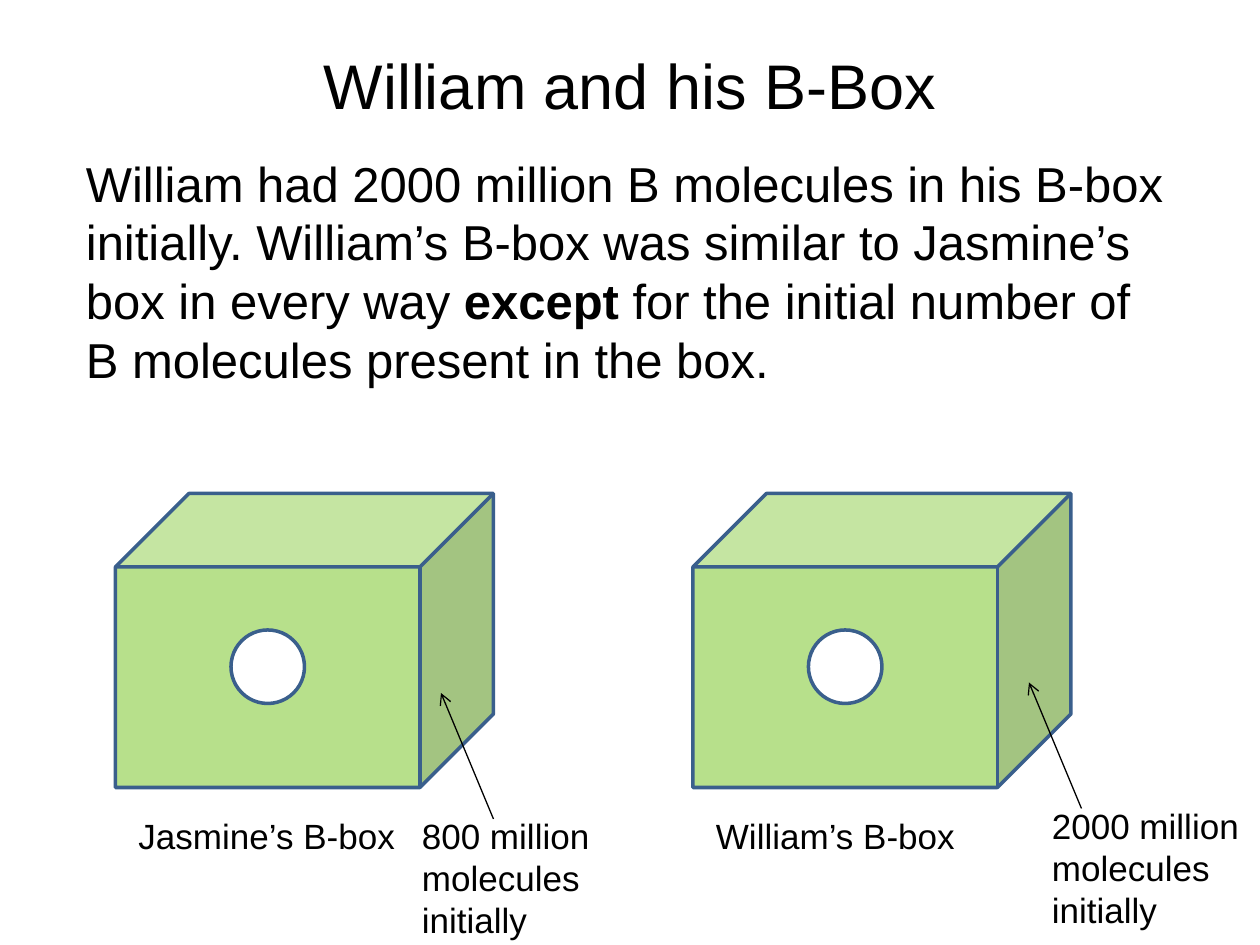
from dataclasses import dataclass

from pptx import Presentation
from pptx.dml.color import RGBColor
from pptx.enum.shapes import MSO_CONNECTOR, MSO_SHAPE
from pptx.enum.text import MSO_ANCHOR, PP_ALIGN
from pptx.oxml.ns import qn
from pptx.util import Pt
from lxml import etree

CUBE, OVAL = MSO_SHAPE.CUBE, MSO_SHAPE.OVAL
STRAIGHT = MSO_CONNECTOR.STRAIGHT
LEFT, CENTER = PP_ALIGN.LEFT, PP_ALIGN.CENTER
TOP, MIDDLE = MSO_ANCHOR.TOP, MSO_ANCHOR.MIDDLE


@dataclass(frozen=True)
class Theme:
    font: str = "Arial"
    ink: str = "000000"
    box: str = "92D050"
    box_alpha: int = 66
    hole: str = "FFFFFF"
    outline: str = "3A5F8C"
    title: int = 36
    body: int = 28
    label: int = 20


THEME = Theme()


def rgb(color):
    return RGBColor.from_string(color)


def write_text(sp, runs, size, align=LEFT, anchor=TOP, space=0):
    """Fill a shape with one paragraph of (text, bold) runs."""
    tf = sp.text_frame
    tf.word_wrap = True
    tf.vertical_anchor = anchor
    p = tf.paragraphs[0]
    p.alignment = align
    p.space_before = p.space_after = Pt(space)
    for text, bold in runs:
        r = p.add_run()
        r.text = text
        r.font.name = THEME.font
        r.font.size = Pt(size)
        r.font.bold = bold
        r.font.color.rgb = rgb(THEME.ink)


def add_text(shapes, x, y, w, h, runs, size, **fmt):
    sp = shapes.add_textbox(Pt(x), Pt(y), Pt(w), Pt(h))
    write_text(sp, runs, size, **fmt)


def add_solid(shapes, kind, x, y, w, h, fill, alpha=100):
    sp = shapes.add_shape(kind, Pt(x), Pt(y), Pt(w), Pt(h))
    sp.shadow.inherit = False
    sp.fill.solid()
    sp.fill.fore_color.rgb = rgb(fill)
    if alpha < 100:
        clr = sp.fill._xPr.find(qn("a:solidFill"))[0]
        etree.SubElement(clr, qn("a:alpha"), val=str(alpha * 1000))
    sp.line.color.rgb = rgb(THEME.outline)
    sp.line.width = Pt(2)


def add_arrow(shapes, x1, y1, x2, y2):
    line = shapes.add_connector(STRAIGHT, Pt(x1), Pt(y1), Pt(x2), Pt(y2))
    line.line.color.rgb = rgb(THEME.ink)
    line.line.width = Pt(0.75)
    etree.SubElement(line.line._get_or_add_ln(), qn("a:tailEnd"), type="arrow")
    etree.SubElement(line._element.spPr, qn("a:effectLst"))


def add_b_box(slide, x, name, name_w, count, count_x, count_y, count_w):
    """Draw a box with a hole, its name, and an arrow from its molecule count."""
    shapes = slide.shapes.add_group_shape().shapes
    add_solid(shapes, CUBE, x, 282, 216, 168, THEME.box, THEME.box_alpha)
    add_solid(shapes, OVAL, x + 66, 360, 42, 42, THEME.hole)
    add_text(shapes, x + 6, 462, name_w, 32, [(name, False)], THEME.label)
    tail_x = count_x + (48 if count_x < 360 else 24)
    tail_y = count_y + 6
    add_arrow(shapes, tail_x, tail_y, tail_x - 30, tail_y - 72)
    add_text(shapes, count_x, count_y, count_w, 80,
             [(f"{count} million molecules initially", False)], THEME.label)


def main():
    prs = Presentation()
    prs.slide_width, prs.slide_height = Pt(720), Pt(540)
    slide = prs.slides.add_slide(prs.slide_layouts[5])

    title = slide.shapes.title
    title.left, title.top, title.width, title.height = Pt(36), Pt(12), Pt(648), Pt(72)
    write_text(title, [("William and his B-Box", False)], THEME.title,
               align=CENTER, anchor=MIDDLE)

    add_text(slide.shapes, 42, 84, 636, 180, [
        ("William had 2000 million B molecules in his B-box initially. "
         "William’s B-box was similar to Jasmine’s box in every way ", False),
        ("except ", True),
        ("for the initial number of B molecules present in the box.", False),
    ], THEME.body, space=6)

    add_b_box(slide, 66, "Jasmine’s B-box", 162, 800, 234, 462, 144)
    add_b_box(slide, 396, "William’s B-box", 192, 2000, 594, 456, 150)

    prs.save("out.pptx")


if __name__ == "__main__":
    main()
